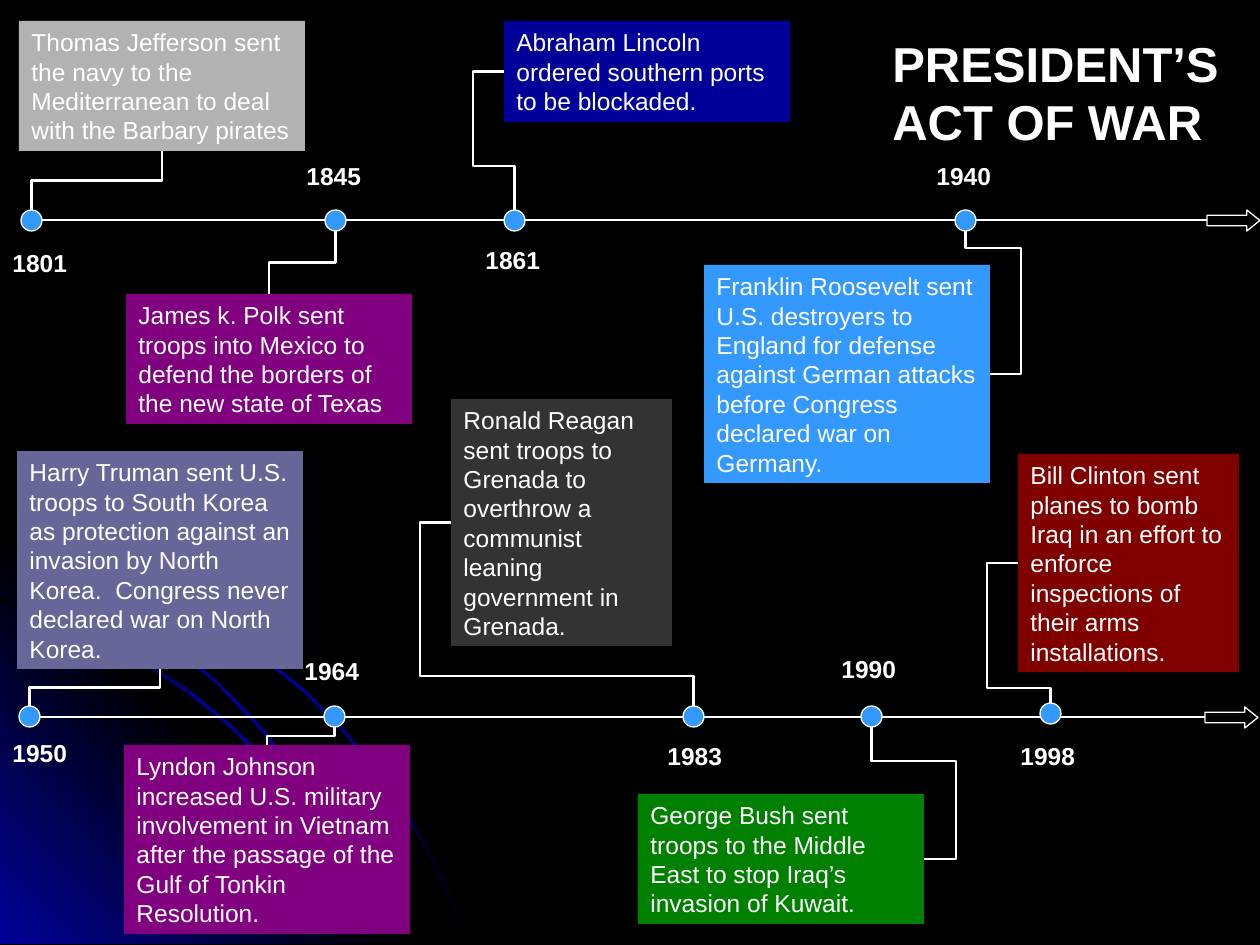
"""Build the two-row timeline slide of presidential acts of war."""
from dataclasses import dataclass
from typing import Optional

from lxml import etree
from pptx import Presentation
from pptx.dml.color import RGBColor
from pptx.enum.shapes import MSO_CONNECTOR, MSO_SHAPE
from pptx.enum.text import MSO_AUTO_SIZE
from pptx.oxml import parse_xml
from pptx.oxml.ns import nsdecls, qn
from pptx.util import Emu, Pt

STRAIGHT, ELBOW = MSO_CONNECTOR.STRAIGHT, MSO_CONNECTOR.ELBOW
OVAL, ARROW = MSO_SHAPE.OVAL, MSO_SHAPE.RIGHT_ARROW
FIT = MSO_AUTO_SIZE.SHAPE_TO_FIT_TEXT

SCALE = 914400 / 126
WIDTH, HEIGHT = 1260, 945
DOT = 21
LABEL_SIZE = (81, 42)
FONT = "Arial"

BLACK = RGBColor(0x00, 0x00, 0x00)
WHITE = RGBColor(0xFF, 0xFF, 0xFF)
NAVY = RGBColor(0x01, 0x01, 0x99)
SKY = RGBColor(0x33, 0x99, 0xFF)
SILVER = RGBColor(0xB2, 0xB2, 0xB2)
PURPLE = RGBColor(0x80, 0x00, 0x80)
SLATE = RGBColor(0x66, 0x66, 0x99)
CHARCOAL = RGBColor(0x33, 0x33, 0x33)
GREEN = RGBColor(0x00, 0x80, 0x00)
MAROON = RGBColor(0x80, 0x00, 0x00)

Point = tuple[int, int]
Rect = tuple[int, int, int, int]


@dataclass(frozen=True)
class Event:
    """An act of war: year label, dot, text box and the bends of its elbow."""
    year: str
    label: Point
    dot: Point
    box: Rect
    color: RGBColor
    text: str
    lane: int
    side: Optional[int] = None


@dataclass(frozen=True)
class Sweep:
    """A gradient outline in the background."""
    points: list[Point]
    ends: RGBColor
    middle: RGBColor
    angle: int


SWEEPS = [
    Sweep([(72, 563), (35, 556), (0, 548), (0, 552), (35, 558), (71, 566), (122, 581),
           (170, 602), (218, 629), (262, 659), (304, 692), (341, 730), (375, 771),
           (407, 818), (425, 848), (441, 879), (454, 911), (466, 944), (469, 944),
           (456, 911), (444, 879), (427, 848), (410, 816), (378, 770), (343, 728),
           (305, 690), (263, 656), (219, 626), (171, 601), (123, 578)], BLACK, NAVY, 45),
    Sweep([(406, 944), (0, 944), (0, 538)], NAVY, BLACK, 315),
    Sweep([(359, 900), (370, 922), (379, 944), (382, 944), (373, 920), (360, 897),
           (335, 852), (305, 806), (271, 764), (232, 726), (192, 692), (147, 663),
           (100, 636), (52, 615), (0, 598), (0, 601), (49, 617), (97, 639), (145, 665),
           (189, 694), (231, 728), (268, 766), (302, 808), (334, 853)], BLACK, NAVY, 45),
    Sweep([(0, 557), (0, 559), (45, 576), (93, 598), (137, 622), (179, 653), (218, 685),
           (255, 724), (286, 762), (318, 808), (336, 840), (353, 874), (368, 910),
           (379, 944), (382, 944), (370, 907), (355, 873), (339, 838), (320, 805),
           (289, 760), (257, 722), (220, 684), (181, 650), (140, 621), (96, 596),
           (49, 573)], BLACK, NAVY, 45),
]

TIMELINES = [(21, 220), (19, 717)]

EVENTS = [
    Event("1801", (0, 242), (21, 210), (19, 21, 286, 130), SILVER,
          "Thomas Jefferson sent the navy to the Mediterranean to deal with the Barbary "
          "pirates", 180),
    Event("1845", (294, 155), (325, 210), (126, 294, 286, 130), PURPLE,
          "James k. Polk sent troops into Mexico to defend the borders of the new state "
          "of Texas", 262),
    Event("1861", (473, 239), (504, 210), (504, 21, 286, 101), NAVY,
          "Abraham Lincoln ordered southern ports to be blockaded.", 166, 473),
    Event("1940", (924, 155), (955, 210), (704, 265, 286, 218), SKY,
          "Franklin Roosevelt sent U.S. destroyers to England for defense against German "
          "attacks before Congress declared war on Germany.", 248, 1021),
    Event("1950", (0, 732), (19, 706), (17, 451, 286, 218), SLATE,
          "Harry Truman sent U.S. troops to South Korea as protection against an invasion "
          "by North Korea.  Congress never declared war on North Korea.", 688),
    Event("1964", (292, 650), (324, 706), (124, 745, 286, 189), PURPLE,
          "Lyndon Johnson increased U.S. military involvement in Vietnam after the passage "
          "of the Gulf of Tonkin Resolution.", 736),
    Event("1983", (655, 735), (683, 706), (451, 399, 221, 247), CHARCOAL,
          "Ronald Reagan sent troops to Grenada to overthrow a communist leaning "
          "government in Grenada.", 676, 420),
    Event("1990", (829, 648), (861, 706), (638, 794, 286, 130), GREEN,
          "George Bush sent troops to the Middle East to stop Iraq’s invasion of Kuwait.",
          761, 956),
    Event("1998", (1008, 735), (1040, 703), (1018, 454, 221, 218), MAROON,
          "Bill Clinton sent planes to bomb Iraq in an effort to enforce inspections of "
          "their arms installations.", 688, 987),
]


def px(*lengths: float) -> list[Emu]:
    return [Emu(round(n * SCALE)) for n in lengths]


def add_sweep(shapes, sweep: Sweep) -> None:
    builder = shapes.build_freeform(*sweep.points[0], scale=SCALE)
    builder.add_line_segments(sweep.points[1:], close=True)
    s = builder.convert_to_shape()
    s.shadow.inherit = False
    s.line.fill.background()
    s.fill.solid()
    stops = "".join(f'<a:gs pos="{pos}"><a:srgbClr val="{color}"/></a:gs>' for pos, color in
                    ((0, sweep.ends), (50000, sweep.middle), (100000, sweep.ends)))
    grad = parse_xml(f'<a:gradFill {nsdecls("a")} rotWithShape="1"><a:gsLst>{stops}</a:gsLst>'
                     f'<a:lin ang="{sweep.angle * 60000}" scaled="0"/></a:gradFill>')
    sp_pr = s.element.spPr
    sp_pr.replace(sp_pr.find(qn("a:solidFill")), grad)


def add_line(shapes, kind, start: tuple, end: tuple, width: float):
    s = shapes.add_connector(kind, *px(*start, *end))
    s.line.color.rgb = WHITE
    s.line.width = Pt(width)
    etree.SubElement(s.element.spPr, qn("a:effectLst"))
    return s


def add_outlined(shapes, kind, rect: Rect, fill: RGBColor):
    s = shapes.add_shape(kind, *px(*rect))
    s.shadow.inherit = False
    s.fill.solid()
    s.fill.fore_color.rgb = fill
    s.line.color.rgb = WHITE
    s.line.width = Pt(0.75)
    return s


def add_text(shapes, rect: Rect, text: str, size: int = 14, bold: bool = False,
             wrap: bool = True, fill: Optional[RGBColor] = None) -> None:
    s = shapes.add_textbox(*px(*rect))
    if fill is not None:
        s.fill.solid()
        s.fill.fore_color.rgb = fill
    tf = s.text_frame
    tf.word_wrap = wrap
    tf.auto_size = FIT
    tf.text = text
    font = tf.paragraphs[0].runs[0].font
    font.name, font.size, font.bold = FONT, Pt(size), bold
    font.color.rgb = WHITE


def add_elbow(shapes, event: Event) -> None:
    left, top, width, height = event.box
    above = event.lane < event.dot[1]
    x2 = event.dot[0] + DOT / 2
    y2 = event.dot[1] + (0 if above else DOT)
    if event.side is None:
        x1, y1 = left + width / 2, top + (height if above else 0)
        mid_x, mid_y = (x1 + x2) / 2, (y1 + y2) / 2
        half_w, half_h = abs(y2 - y1) / 2, abs(x2 - x1) / 2
        s = add_line(shapes, ELBOW, (mid_x - half_w, mid_y - half_h),
                     (mid_x + half_w, mid_y + half_h), 1.5)
        s.element.spPr.xfrm.set("rot", str((90 if above else 270) * 60000))
        return
    x1 = left if event.side < left else left + width
    y1 = top + height / 2
    s = add_line(shapes, ELBOW, (x1, y1), (x2, y2), 1.5)
    geom = s.element.spPr.find(qn("a:prstGeom"))
    geom.set("prst", "bentConnector4")
    guides = geom.find(qn("a:avLst"))
    bends = ((event.side - x1) / (x2 - x1), (event.lane - y1) / (y2 - y1))
    for i, bend in enumerate(bends, 1):
        etree.SubElement(guides, qn("a:gd"), name=f"adj{i}", fmla=f"val {round(bend * 100000)}")


def main() -> None:
    prs = Presentation()
    prs.slide_width, prs.slide_height = px(WIDTH, HEIGHT)
    slide = prs.slides.add_slide(prs.slide_layouts[6])
    slide.background.fill.solid()
    slide.background.fill.fore_color.rgb = BLACK
    shapes = slide.shapes
    for sweep in SWEEPS:
        add_sweep(shapes, sweep)
    for x, y in TIMELINES:
        add_line(shapes, STRAIGHT, (x, y), (x + 1197, y), 0.75)
        arrow = add_outlined(shapes, ARROW, (x + 1186, y - 10, 53, DOT), BLACK)
        arrow.adjustments[1] = 0.625
    for event in EVENTS:
        add_outlined(shapes, OVAL, (*event.dot, DOT, DOT), SKY)
        add_text(shapes, event.box, event.text, fill=event.color)
        add_elbow(shapes, event)
        add_text(shapes, (*event.label, *LABEL_SIZE), event.year, bold=True, wrap=False)
    add_text(shapes, (880, 27, 380, 130), "PRESIDENT’S ACT OF WAR", size=28, bold=True)
    prs.save("out.pptx")


if __name__ == "__main__":
    main()
